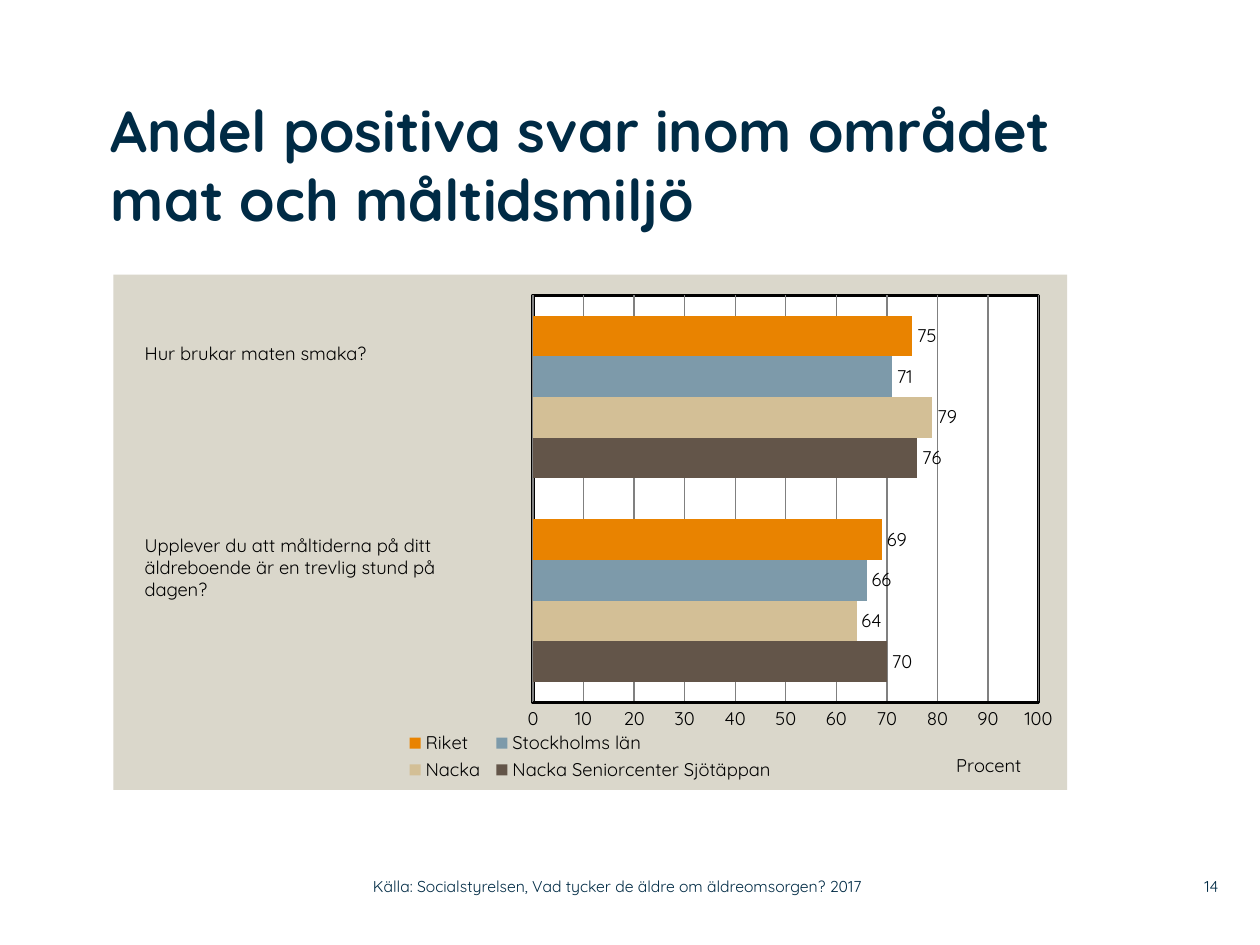
import pptx
import pptx.util
import pptx.dml.color
import pptx.chart.data
import pptx.enum.chart
import pptx.enum.text
import pptx.oxml
import pptx.oxml.ns

Pt = pptx.util.Pt
XL = pptx.enum.chart
FONT = "Quicksand"
NAVY, BLACK, GREY = "002B45", "000000", "808080"
MID = pptx.enum.text.MSO_ANCHOR.MIDDLE
RIGHT = pptx.enum.text.PP_ALIGN.RIGHT

TITLE = "Andel positiva svar inom området mat och måltidsmiljö"
ASKS = [
    ((75.6, 192.24, 213.84, 20.16), ["Hur brukar maten smaka?"]),
    ((75.6, 301.68, 210.96, 45.36),
     ["Upplever du att måltiderna på ditt äldreboende är en trevlig stund på",
      "dagen?"]),
]
SOURCE = "Källa: Socialstyrelsen, Vad tycker de äldre om äldreomsorgen? 2017"
CATS = ["1", "2"]
SERIES = [
    ("Nacka Seniorcenter Sjötäppan", (70, 76), "635549"),
    ("Nacka", (64, 79), "D3BF96"),
    ("Stockholms län", (66, 71), "7D9AAA"),
    ("Riket", (69, 75), "E98300"),
]


def color(code):
    return pptx.dml.color.RGBColor.from_string(code)


def paint(fill, code):
    fill.solid()
    fill.fore_color.rgb = color(code)


def style(font, size=10.5, code=BLACK, bold=False):
    font.name = FONT
    font.size = Pt(size)
    font.bold = bold
    font.color.rgb = color(code)


def write(slide, box, lines, inset=True, anchor=None, align=None, **form):
    frame = slide.shapes.add_textbox(*map(Pt, box)).text_frame
    frame.word_wrap = True
    if not inset:
        frame.margin_left = frame.margin_right = 0
        frame.margin_top = frame.margin_bottom = 0
    if anchor is not None:
        frame.vertical_anchor = anchor
    for i, line in enumerate(lines):
        para = frame.add_paragraph() if i else frame.paragraphs[0]
        if align is not None:
            para.alignment = align
        run = para.add_run()
        run.text = line
        style(run.font, **form)


def xml(body):
    return pptx.oxml.parse_xml(
        body.replace(">", " " + pptx.oxml.ns.nsdecls("c", "a") + ">", 1))


def layout(x, y, w=None, h=None, inner=False):
    parts = '<c:layoutTarget val="inner"/>' if inner else ""
    parts += '<c:xMode val="edge"/><c:yMode val="edge"/>'
    for key, val in zip("xywh", (x, y, w, h)):
        if val is not None:
            parts += f'<c:{key} val="{val}"/>'
    return xml(f"<c:layout><c:manualLayout>{parts}</c:manualLayout></c:layout>")


def place(node, item, after=None):
    for old in node.findall(pptx.oxml.ns.qn("c:layout")):
        node.remove(old)
    if after is None:
        node.insert(0, item)
    else:
        node.find(pptx.oxml.ns.qn(after)).addnext(item)


def area(fill, line):
    return xml(f'<c:spPr><a:solidFill><a:srgbClr val="{fill}"/></a:solidFill>'
               f"{line}</c:spPr>")


def draw(slide):
    data = pptx.chart.data.CategoryChartData()
    data.categories = CATS
    for name, vals, _ in SERIES:
        data.add_series(name, vals)
    chart = slide.shapes.add_chart(
        XL.XL_CHART_TYPE.BAR_CLUSTERED,
        *map(Pt, (64.8, 156.96, 545.04, 294.48)), data).chart
    style(chart.font)
    chart.has_title = False

    plot = chart.plots[0]
    plot.gap_width = 100
    plot.overlap = 0
    plot.vary_by_categories = False
    for bar, (_, _, code) in zip(plot.series, SERIES):
        paint(bar.format.fill, code)
        bar.format.line.fill.background()
        tags = bar.data_labels
        tags.show_value = True
        tags.position = XL.XL_LABEL_POSITION.OUTSIDE_END
        style(tags.font)

    chart.category_axis.visible = False
    axis = chart.value_axis
    axis.minimum_scale, axis.maximum_scale, axis.major_unit = 0, 100, 10
    axis.major_tick_mark = axis.minor_tick_mark = XL.XL_TICK_MARK.NONE
    axis.format.line.color.rgb = color(BLACK)
    axis.format.line.width = Pt(2)
    style(axis.tick_labels.font)
    grid = axis.major_gridlines.format.line
    grid.color.rgb = color(GREY)
    grid.width = Pt(0.75)
    title = axis.axis_title
    title.text_frame.text = "Procent"
    style(title.text_frame.paragraphs[0].runs[0].font)
    place(title._element, layout(0.88, 0.92), "c:tx")

    chart.has_legend = True
    legend = chart.legend
    legend.position = XL.XL_LEGEND_POSITION.BOTTOM
    legend.include_in_layout = False
    style(legend.font)
    place(legend._element, layout(0.3, 0.88, 0.4, 0.11), "c:legendPos")

    root = chart._chartSpace.chart
    place(root.plotArea, layout(0.44, 0.04, 0.53, 0.79, True))
    root.plotArea.append(area(
        "FFFFFF", f'<a:ln w="{Pt(2)}"><a:solidFill><a:srgbClr val="{BLACK}"/>'
        "</a:solidFill></a:ln>"))
    root.addnext(area("DAD7CB", "<a:ln><a:noFill/></a:ln>"))


def main():
    deck = pptx.Presentation()
    deck.slide_width, deck.slide_height = Pt(720), Pt(540)
    slide = deck.slides.add_slide(deck.slide_layouts[6])
    draw(slide)
    write(slide, (63.36, 54, 606.24, 102.24), [TITLE], inset=False,
          size=33, code=NAVY, bold=True)
    for box, lines in ASKS:
        write(slide, box, lines)
    foot = dict(inset=False, anchor=MID, size=9, code=NAVY)
    write(slide, (662.4, 496.08, 33.84, 20.88), ["14"], align=RIGHT, **foot)
    write(slide, (213.12, 496.08, 318.96, 20.88), [SOURCE], **foot)
    deck.save("out.pptx")


if __name__ == "__main__":
    main()
